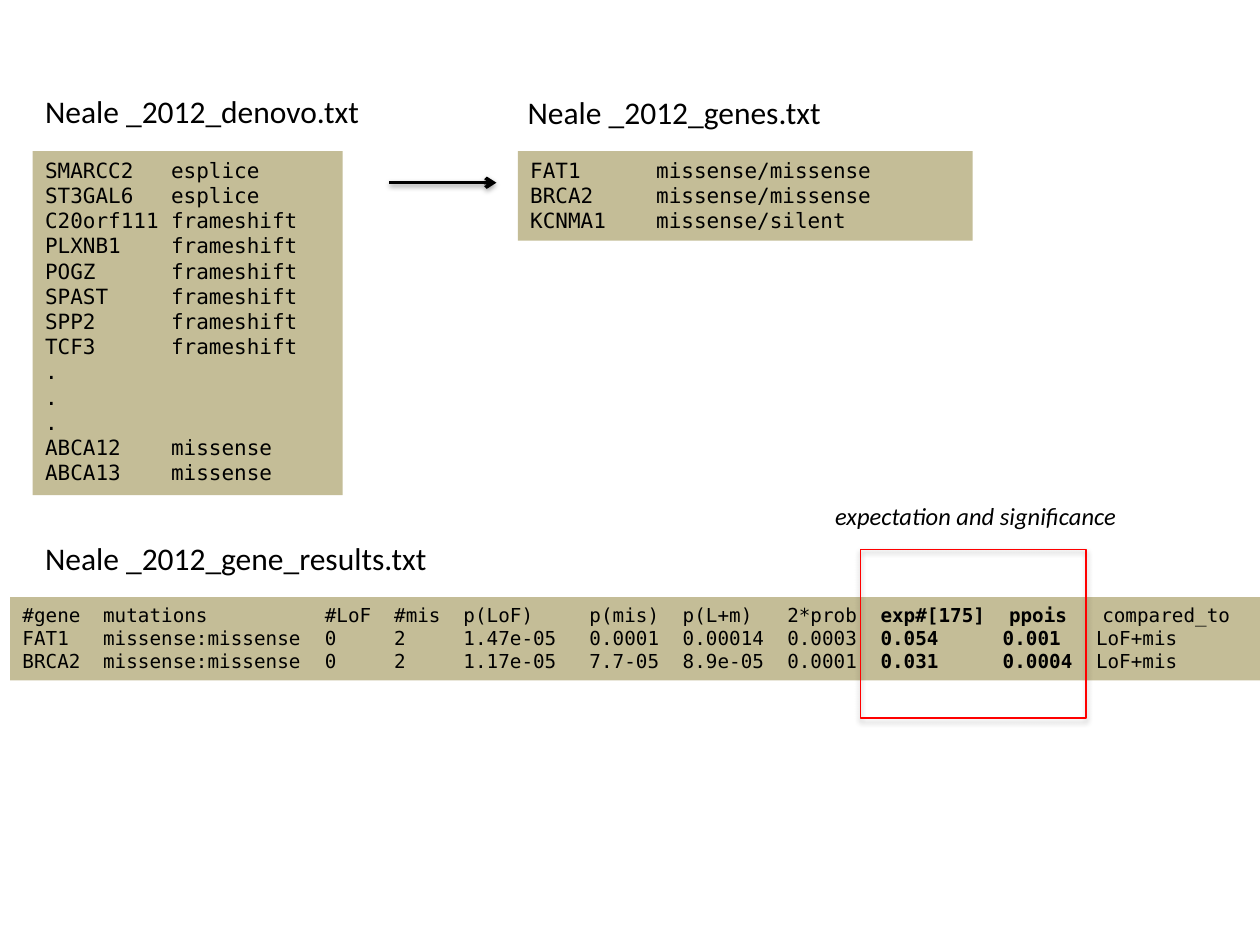
from lxml import etree
from pptx import Presentation, util as u
from pptx.dml.color import RGBColor
from pptx.enum import shapes, text
from pptx.oxml import parse_xml
from pptx.oxml.ns import nsdecls, qn

COLORS = {"ink": "000000", "panel": "C4BD97", "mark": "FF0000"}
BODY, MONO = "Calibri", "DejaVu Sans Mono"
COLS, ROWS = 100, 75  # slide grid

MUTATIONS = [
    ("SMARCC2", "esplice"), ("ST3GAL6", "esplice"), ("C20orf111", "frameshift"),
    ("PLXNB1", "frameshift"), ("POGZ", "frameshift"), ("SPAST", "frameshift"),
    ("SPP2", "frameshift"), ("TCF3", "frameshift"), (".",), (".",), (".",),
    ("ABCA12", "missense"), ("ABCA13", "missense"),
]
GENES = [("FAT1", "missense/missense"), ("BRCA2", "missense/missense"),
         ("KCNMA1", "missense/silent")]
RESULTS = [
    ("#gene", "mutations", "#LoF", "#mis", "p(LoF)", "p(mis)", "p(L+m)",
     "2*prob", "exp#[175]", "ppois", "compared_to"),
    ("FAT1", "missense:missense", "0", "2", "1.47e-05", "0.0001", "0.00014",
     "0.0003", "0.054", "0.001", "LoF+mis"),
    ("BRCA2", "missense:missense", "0", "2", "1.17e-05", "7.7-05", "8.9e-05",
     "0.0001", "0.031", "0.0004", "LoF+mis"),
]
BOLD_COLS = (8, 9)  # expectation and significance

# Tab stops in inches from the left edge of the text
PAIR_STOPS = [1.0]
VALUE_STOPS = [0.64, 2.4, 2.95, 3.5, 4.5, 5.24, 6.07, 6.81, 7.78, 8.52]
HEAD_STOPS = VALUE_STOPS[:-2] + [x + 0.05 for x in VALUE_STOPS[-2:]]

prs = Presentation()
prs.slide_width, prs.slide_height = u.Inches(10), u.Inches(7.5)
s = prs.slides.add_slide(prs.slide_layouts[6])


def place(*box):
    """Turn grid columns and rows into slide lengths."""
    sizes = (prs.slide_width / COLS, prs.slide_height / ROWS) * 2
    return [u.Emu(round(n * size)) for n, size in zip(box, sizes)]


def color(name):
    return RGBColor.from_string(COLORS[name])


def add_run(p, words, size, font, bold=False, italic=False):
    r = p.add_run()
    r.text = words
    r.font.size, r.font.name = u.Pt(size), font
    r.font.bold, r.font.italic = bold, italic
    r.font.color.rgb = color("ink")


def set_tabs(p, stops):
    tabs = etree.SubElement(p._p.get_or_add_pPr(), qn("a:tabLst"))
    for stop in stops:
        etree.SubElement(tabs, qn("a:tab"), pos=str(u.Inches(stop)), algn="l")


def set_shadow(sp, alpha, blur, dist):
    sp._element.spPr.append(parse_xml(
        f'<a:effectLst {nsdecls("a")}><a:outerShdw blurRad="{u.Pt(blur)}" '
        f'dist="{u.Pt(dist)}" dir="5400000" rotWithShape="0">'
        f'<a:srgbClr val="{COLORS["ink"]}"><a:alpha val="{alpha * 1000}"/>'
        '</a:srgbClr></a:outerShdw></a:effectLst>'))


def label(box, words, size=18, italic=False):
    tf = s.shapes.add_textbox(*place(*box)).text_frame
    tf.word_wrap = False
    tf.vertical_anchor = text.MSO_ANCHOR.BOTTOM
    add_run(tf.paragraphs[0], words, size, BODY, italic=italic)


def listing(box, rows, row_stops, size=12, bold_cols=()):
    """Shaded file excerpt with tabbed columns."""
    sp = s.shapes.add_shape(shapes.MSO_SHAPE.RECTANGLE, *place(*box))
    sp.shadow.inherit = False
    sp.fill.solid()
    sp.fill.fore_color.rgb = color("panel")
    sp.line.fill.background()
    tf = sp.text_frame
    tf.word_wrap = True
    tf.vertical_anchor = text.MSO_ANCHOR.TOP
    for i, (row, stops) in enumerate(zip(rows, row_stops)):
        p = tf.add_paragraph() if i else tf.paragraphs[0]
        p.alignment = text.PP_ALIGN.LEFT
        set_tabs(p, stops)
        for col, value in enumerate(row):
            words = "\t" + value if col else value
            add_run(p, words, size, MONO, bold=col in bold_cols)


def arrow(x1, x2, y):
    line = s.shapes.add_connector(shapes.MSO_CONNECTOR.STRAIGHT,
                                  *place(x1, y, x2, y))
    line.line.color.rgb = color("ink")
    line.line.width = u.Pt(2)
    etree.SubElement(line.line._get_or_add_ln(), qn("a:tailEnd"), type="arrow")
    set_shadow(line, 38, 3.1, 1.6)


def highlight(box):
    sp = s.shapes.add_shape(shapes.MSO_SHAPE.RECTANGLE, *place(*box))
    sp.fill.background()
    sp.line.color.rgb = color("mark")
    sp.line.width = u.Pt(0.75)
    set_shadow(sp, 35, 3.1, 1.8)


# Input file and the genes drawn from it
listing((2.6, 12, 24.6, 27.3), MUTATIONS, [PAIR_STOPS] * len(MUTATIONS))
label((2.6, 0.7, 27.3, 10.1), "Neale _2012_denovo.txt")
listing((41.1, 12, 36.1, 7.1), GENES, [PAIR_STOPS] * len(GENES))
label((40.9, 0.8, 25.6, 10.1), "Neale _2012_genes.txt")
arrow(30.9, 39.4, 14.5)

# Results with the marked columns
listing((0.8, 47.4, 99.2, 6.6), RESULTS,
        [HEAD_STOPS, VALUE_STOPS, VALUE_STOPS], 11, BOLD_COLS)
label((2.6, 42.3, 32.7, 4), "Neale _2012_gene_results.txt")
highlight((68.3, 43.6, 17.9, 13.4))
label((65.3, 39.2, 25.1, 3.4), "expectation and significance", 14, italic=True)

prs.save("out.pptx")
